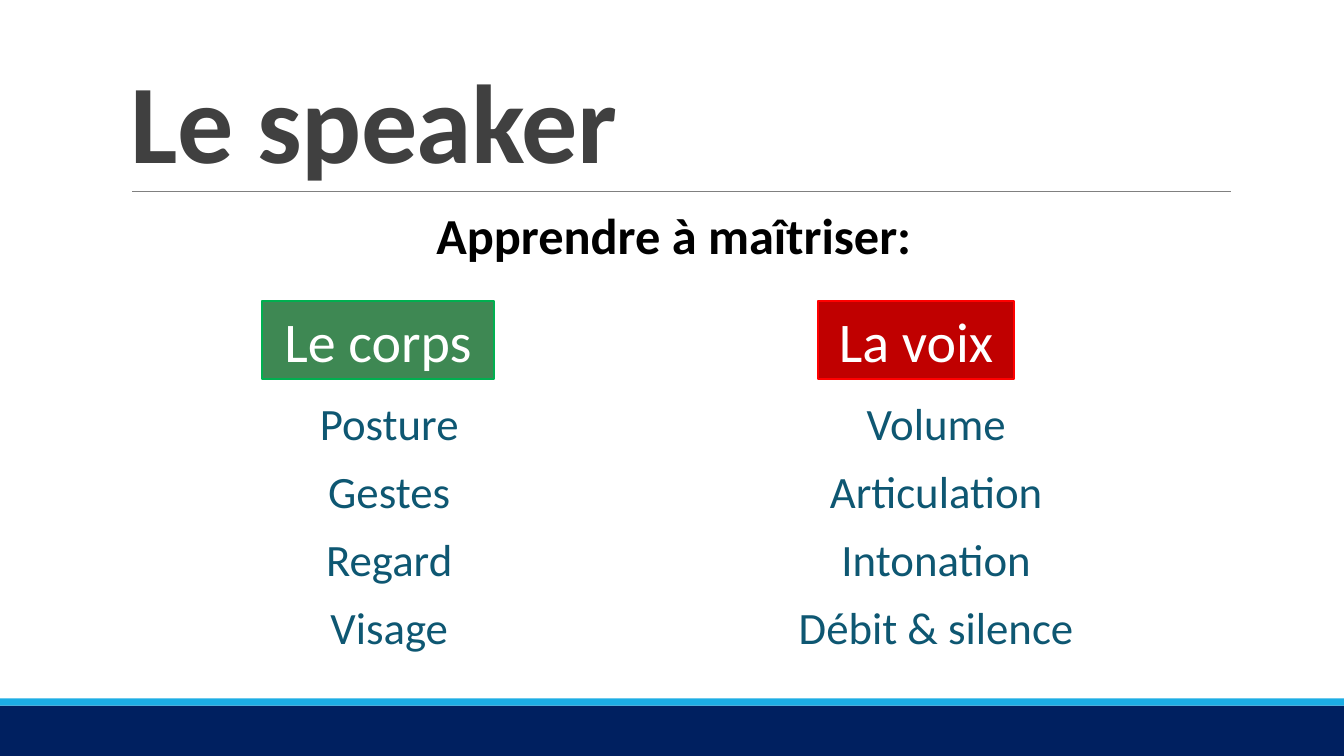
from lxml.etree import SubElement
from pptx import Presentation
from pptx.dml.color import RGBColor as RGB
from pptx.enum.shapes import MSO_CONNECTOR as LINE, MSO_SHAPE as SHAPE
from pptx.enum.text import MSO_ANCHOR as ANCHOR, PP_ALIGN as ALIGN
from pptx.oxml.ns import qn
from pptx.util import Inches, Pt

NAVY, SKY, GREY = RGB(0, 0x20, 0x60), RGB(0x1C, 0xAD, 0xE4), RGB(0x80, 0x80, 0x80)
DARK, BLACK, WHITE = RGB(0x40, 0x40, 0x40), RGB(0, 0, 0), RGB(255, 255, 255)
TEAL = RGB(0x0E, 0x57, 0x72)
GREEN, LIME = RGB(0x3E, 0x88, 0x53), RGB(0, 0xB0, 0x50)
RED, BRIGHT = RGB(0xC0, 0, 0), RGB(255, 0, 0)

TITLE = "Le speaker"
LEAD = "Apprendre à maîtriser:"
# heading, fill, line, (left, width) of the badge, (left, width) of the list, items
COLUMNS = [
    ("Le corps", GREEN, LIME, (2.6, 2.3), (2.6, 2.3),
     ["Posture", "Gestes", "Regard", "Visage"]),
    ("La voix", RED, BRIGHT, (8.11, 1.95), (7.69, 2.97),
     ["Volume", "Articulation", "Intonation", "Débit & silence"]),
]

WIDE, HIGH = 13.33, 7.5
BAR, STRIPE = 0.5, 0.07
RULE_Y = 1.9
BADGE_Y, BADGE_H = 2.99, 0.77
LIST_Y, LIST_H = 3.94, 2.57
INDENT = 0.1

deck = Presentation()
deck.slide_width, deck.slide_height = Inches(WIDE), Inches(HIGH)
slide = deck.slides.add_slide(deck.slide_layouts[6])
shapes = slide.shapes


def write(frame, lines, size, color, bold=False, align=ALIGN.LEFT):
    frame.word_wrap = True
    frame.text = "\n".join(lines)
    for par in frame.paragraphs:
        par.alignment = align
        font = par.runs[0].font
        font.name, font.size, font.bold = "Calibri", Pt(size), bold
        font.color.rgb = color


def add_rect(x, y, w, h, fill, line=None):
    rect = shapes.add_shape(SHAPE.RECTANGLE, *map(Inches, (x, y, w, h)))
    rect.shadow.inherit = False
    rect.fill.solid()
    rect.fill.fore_color.rgb = fill
    if line is None:
        rect.line.fill.background()
    else:
        rect.line.color.rgb = line
        rect.line.width = Pt(1.25)
    return rect


def add_text(x, y, w, h):
    return shapes.add_textbox(*map(Inches, (x, y, w, h))).text_frame


def add_bullet(par):
    """Give the paragraph a hanging indent with a blank bullet."""
    props = par._p.get_or_add_pPr()
    props.set("marL", str(Inches(INDENT)))
    props.set("indent", str(-Inches(INDENT)))
    color = SubElement(props, qn("a:buClr"))
    SubElement(color, qn("a:srgbClr"), val=str(SKY))
    SubElement(props, qn("a:buChar"), char=" ")


def add_list(x, w, items):
    frame = add_text(x, LIST_Y, w, LIST_H)
    frame.margin_left = frame.margin_right = 0
    write(frame, items, 32, TEAL, align=ALIGN.CENTER)
    for par in frame.paragraphs:
        par.line_spacing = 0.9
        par.space_before, par.space_after = Pt(12), Pt(2)
        add_bullet(par)


add_rect(0, HIGH - BAR, WIDE, BAR, NAVY)
add_rect(0, HIGH - BAR - STRIPE, WIDE, STRIPE, SKY)

rule = shapes.add_connector(LINE.STRAIGHT, *map(Inches, (1.31, RULE_Y, 12.21, RULE_Y)))
rule.line.color.rgb = GREY
rule.line.width = Pt(0.5)
SubElement(rule._element.spPr, qn("a:effectLst"))

title = add_text(1.2, 0.31, 11, 1.59)
title.vertical_anchor = ANCHOR.BOTTOM
write(title, [TITLE], 80, DARK, bold=True)
title.paragraphs[0].line_spacing = 0.85
title.paragraphs[0].runs[0].font._element.set("spc", "-50")

write(add_text(4.23, 1.98, 4.95, 0.71), [LEAD], 36, BLACK, bold=True)

for head, fill, line, (x, w), (list_x, list_w), items in COLUMNS:
    badge = add_rect(x, BADGE_Y, w, BADGE_H, fill, line)
    badge.text_frame.vertical_anchor = ANCHOR.TOP
    write(badge.text_frame, [head], 40, WHITE, align=ALIGN.CENTER)
    add_list(list_x, list_w, items)

deck.save("out.pptx")
